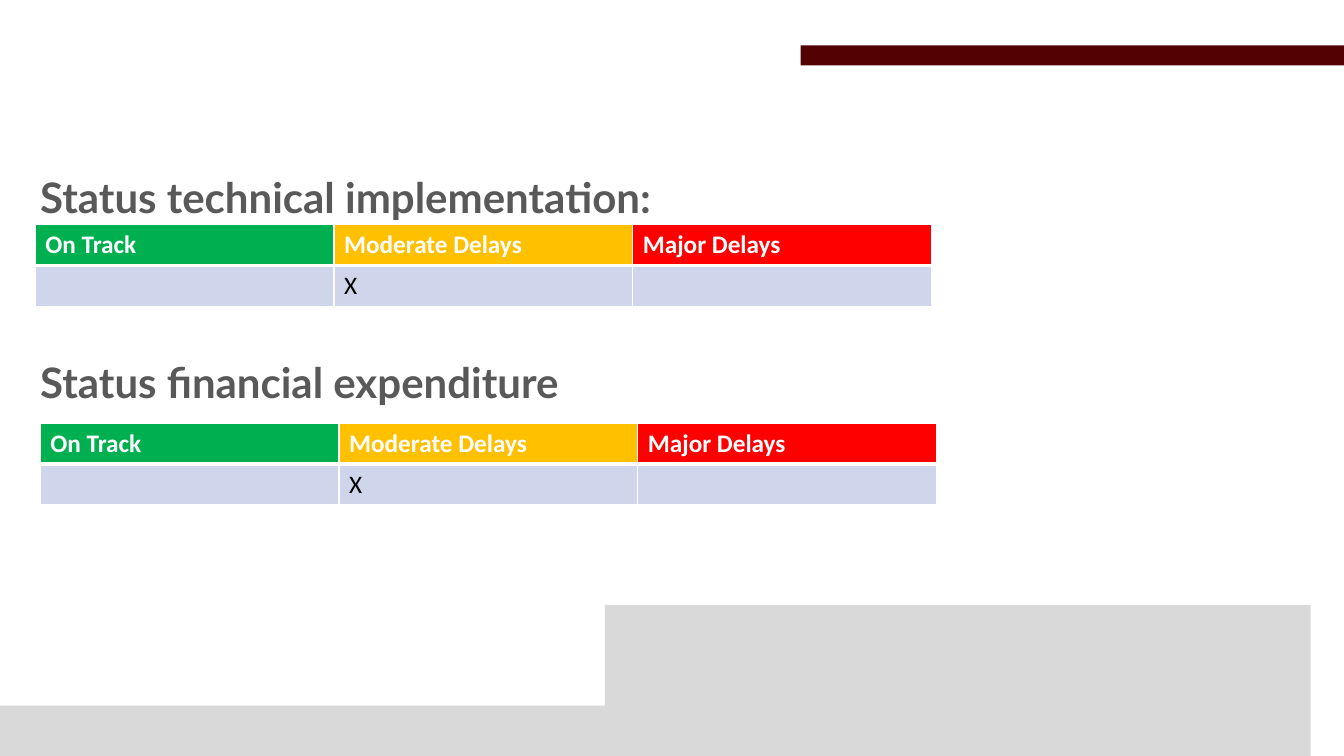
"""Build the project status slide with two traffic-light tables."""
from lxml.etree import SubElement
from pptx import Presentation
from pptx.dml.color import RGBColor
from pptx.enum.shapes import MSO_SHAPE
from pptx.oxml.ns import qn
from pptx.util import Inches, Pt

COLORS = {"wave": "D9D9D9", "bar": "530203", "heading": "595959", "white": "FFFFFF",
          "black": "000000", "green": "00B050", "amber": "FFC000", "red": "FF0000",
          "cell": "CFD5EA"}
HEADINGS = [("Status technical implementation:", 0), ("Status financial expenditure", 88)]
STATUSES = [("On Track", "green"), ("Moderate Delays", "amber"), ("Major Delays", "red")]
TABLES = [((0.35, 2.23), ["", "X", ""]), ((0.4, 4.2), ["", "X", ""])]
TABLE_WIDTH, ROW_HEIGHT = 8.89, 0.405
WAVE_CURVES = [[(13.33, 6.46), (11.65, 6.22), (9.02, 6.16), (5.02, 6.63)],
               [(5.02, 6.63), (1.33, 7.07), (0.26, 6.68), (-0.02, 6.51)]]
WAVE_CORNERS = [(-0.02, 7.5), (13.33, 7.5)]
CURVE_STEPS = 40


def color(name):
    return RGBColor.from_string(COLORS[name])


def paint(shape, name):
    shape.shadow.inherit = False
    shape.fill.solid()
    shape.fill.fore_color.rgb = color(name)
    shape.line.fill.background()


def curve_points(curve):
    for step in range(1, CURVE_STEPS + 1):
        t = step / CURVE_STEPS
        weights = [(1 - t) ** 3, 3 * t * (1 - t) ** 2, 3 * t * t * (1 - t), t ** 3]
        yield tuple(sum(w * point[axis] for w, point in zip(weights, curve))
                    for axis in (0, 1))


def add_wave(page):
    points = [point for curve in WAVE_CURVES for point in curve_points(curve)]
    builder = page.shapes.build_freeform(*WAVE_CURVES[0][0], scale=Inches(1))
    builder.add_line_segments(points + WAVE_CORNERS, close=True)
    paint(builder.convert_to_shape(), "wave")


def add_span(para, text, font_name, size, color_name, bold):
    span = para.add_run()
    span.text = text
    span.font.name = font_name
    span.font.size = Pt(size)
    span.font.bold = bold
    span.font.color.rgb = color(color_name)


def add_headings(page):
    box = page.shapes.add_textbox(Inches(0.3), Inches(1.6), Inches(12.15), Inches(4.57))
    frame = box.text_frame
    frame.word_wrap = True
    for index, (text, gap) in enumerate(HEADINGS):
        para = frame.add_paragraph() if index else frame.paragraphs[0]
        para.line_spacing = Pt(40)
        para.space_after = Pt(4)
        if gap:
            para.space_before = Pt(gap)
        add_span(para, text, "Lato", 30, "heading", True)


def add_borders(cell, top, bottom):
    properties = cell._tc.get_or_add_tcPr()
    for index, (side, width) in enumerate(zip("LRTB", (1, 1, top, bottom))):
        line = SubElement(properties, qn(f"a:ln{side}"), w=str(Pt(width)))
        fill = SubElement(line, qn("a:solidFill"))
        SubElement(fill, qn("a:srgbClr"), val=COLORS["white"])
        properties.insert(index, line)


def fill_cell(cell, text, fill_name, header):
    cell.fill.solid()
    cell.fill.fore_color.rgb = color(fill_name)
    add_borders(cell, *((1, 3) if header else (3, 1)))
    if text:
        add_span(cell.text_frame.paragraphs[0], text, "Calibri", 18,
                 "white" if header else "black", header)


def add_status_table(page, left, top, marks):
    table = page.shapes.add_table(2, len(STATUSES), Inches(left), Inches(top),
                                  Inches(TABLE_WIDTH), Inches(2 * ROW_HEIGHT)).table
    for column, ((status, fill_name), mark) in enumerate(zip(STATUSES, marks)):
        fill_cell(table.cell(0, column), status, fill_name, True)
        fill_cell(table.cell(1, column), mark, "cell", False)


def main():
    deck = Presentation()
    deck.slide_width, deck.slide_height = Inches(13.33), Inches(7.5)
    page = deck.slides.add_slide(deck.slide_layouts[6])
    add_wave(page)
    bar = page.shapes.add_shape(MSO_SHAPE.RECTANGLE, Inches(7.94), Inches(0.45),
                                Inches(5.4), Inches(0.2))
    paint(bar, "bar")
    add_headings(page)
    for (left, top), marks in TABLES:
        add_status_table(page, left, top, marks)
    deck.save("out.pptx")


if __name__ == "__main__":
    main()
